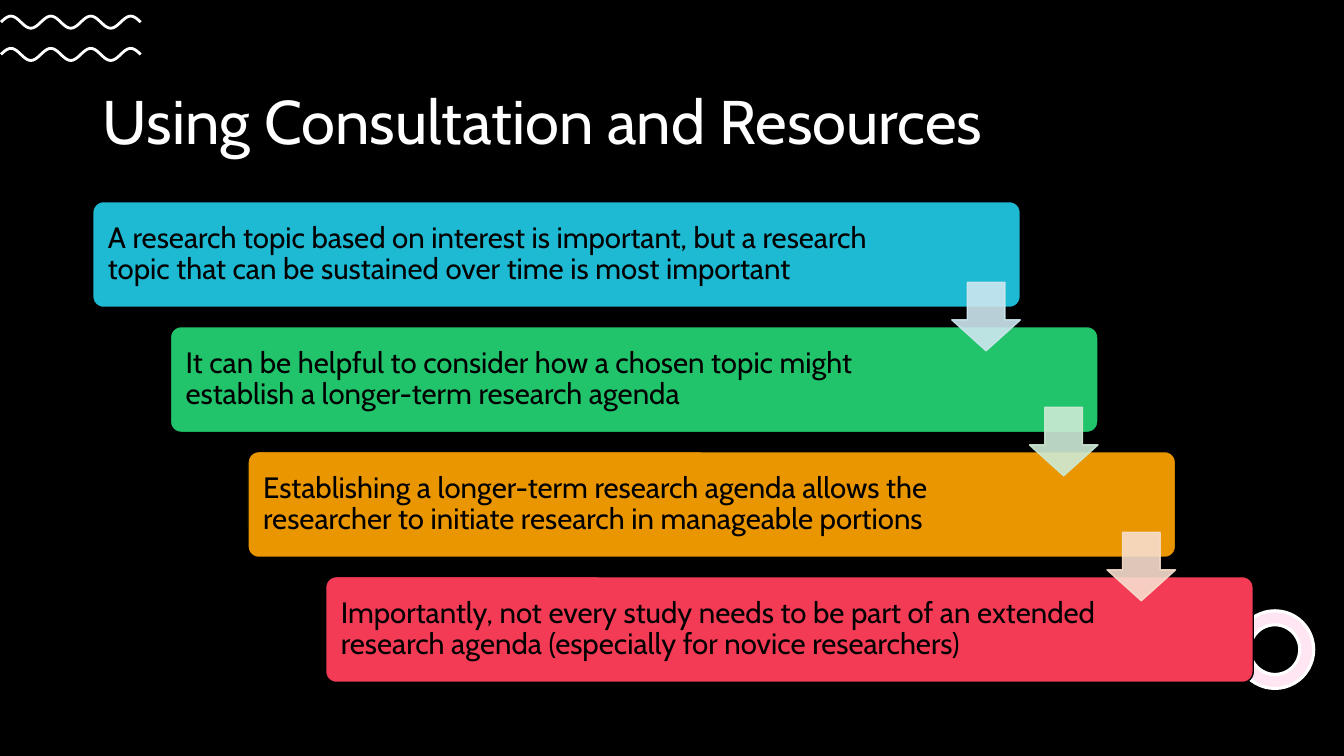
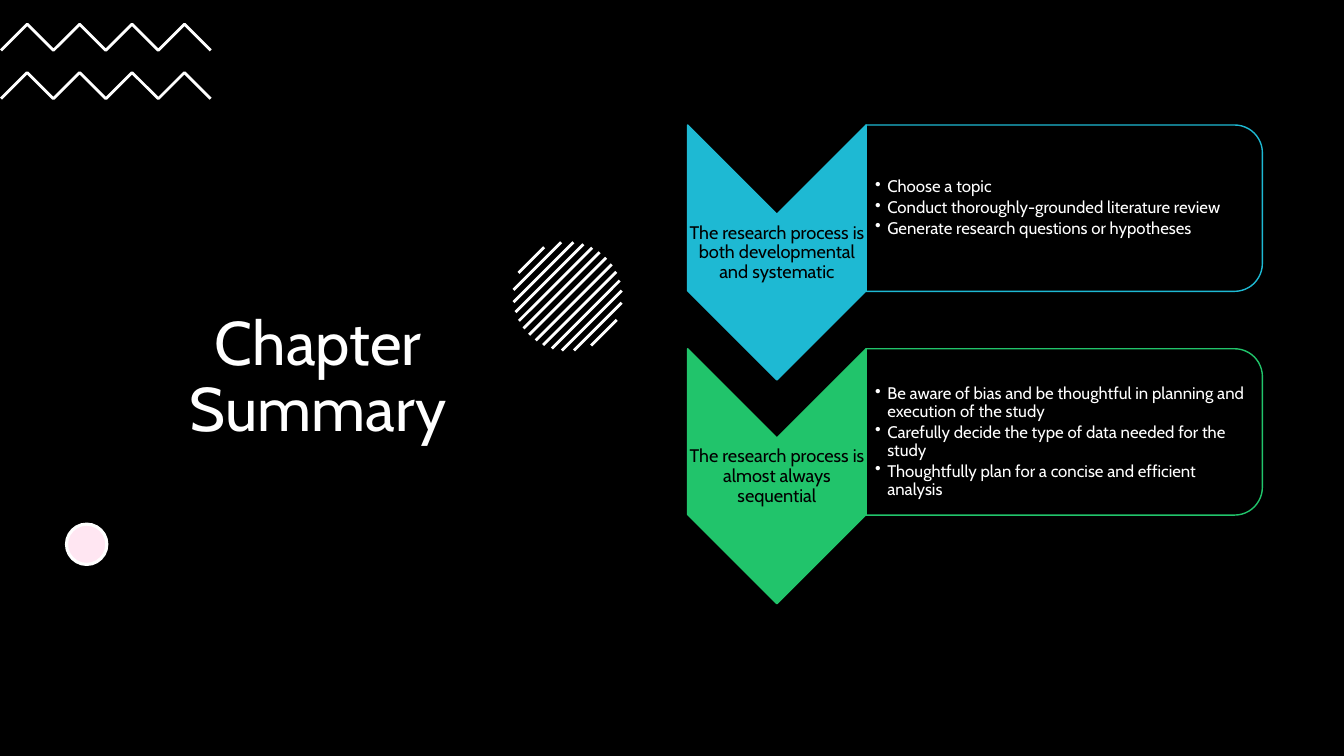
"""Build two black slides: a staircase of research advice and a chapter summary."""
import math
from dataclasses import dataclass

from lxml import etree
from pptx import Presentation
from pptx.dml.color import RGBColor
from pptx.enum import shapes, text
from pptx.oxml import ns
from pptx.util import Inches, Pt


@dataclass(frozen=True)
class Theme:
    font: str = "Cabin"
    black: str = "000000"
    white: str = "FFFFFF"
    pink: str = "FFE6F2"
    blue: str = "1EB9D3"
    green: str = "21C46B"
    orange: str = "EA9600"
    red: str = "F43B56"
    arrows: tuple = ("CDE6EF", "CDEAD4", "F7DDCC")
    title: int = 44
    step: int = 21
    label: int = 13
    bullet: int = 12


T = Theme()
MSO = shapes.MSO_SHAPE
CENTER = text.PP_ALIGN.CENTER
LEFT = text.PP_ALIGN.LEFT


def paint(sp, fill, line, width=1.0, alpha=None):
    sp.shadow.inherit = False
    if fill:
        sp.fill.solid()
        sp.fill.fore_color.rgb = RGBColor.from_string(fill)
    else:
        sp.fill.background()
    sp.line.color.rgb = RGBColor.from_string(line)
    sp.line.width = Pt(width)
    if alpha:
        for clr in sp._element.spPr.iter(ns.qn("a:srgbClr")):
            etree.SubElement(clr, ns.qn("a:alpha"), val=str(alpha * 1000))


def write(sp, lines, size, color, align=LEFT, insets=(0.1, 0.05, 0.1, 0.05), bullets=False):
    tf = sp.text_frame
    tf.word_wrap = True
    tf.auto_size = text.MSO_AUTO_SIZE.NONE
    tf.vertical_anchor = text.MSO_ANCHOR.MIDDLE
    tf.margin_left, tf.margin_top, tf.margin_right, tf.margin_bottom = map(Inches, insets)
    tf.text = "\n".join(lines)
    for p in tf.paragraphs:
        p.alignment = align
        p.line_spacing = 0.9
        if bullets:
            p.space_after = Pt(1.8)
            pPr = p._p.get_or_add_pPr()
            pPr.set("marL", str(Inches(0.12)))
            pPr.set("indent", str(-Inches(0.12)))
            etree.SubElement(pPr, ns.qn("a:buChar"), char="•")
        for r in p.runs:
            r.font.name = T.font
            r.font.size = Pt(size)
            r.font.color.rgb = RGBColor.from_string(color)


prs = Presentation()
prs.slide_width, prs.slide_height = Inches(13.33), Inches(7.5)
bg = prs.slide_master.background.fill
bg.solid()
bg.fore_color.rgb = RGBColor.from_string(T.black)

wave = [(0.01 + 0.0198 * i, -0.06 * math.sin(math.pi * i / 10)) for i in range(71)]
zigzag = [(0.01 + 0.26 * i, -0.26 * (i % 2)) for i in range(9)]
slides = []
for title, box, align, curve, baselines in (
    ("Using Consultation and Resources", (0.92, 0.62, 11.5, 1.23), LEFT, wave, (0.22, 0.54)),
    ("Chapter Summary", (1.21, 0.76, 3.89, 5.99), CENTER, zigzag, (0.5, 0.98)),
):
    s = prs.slides.add_slide(prs.slide_layouts[5])
    slides.append(s)
    sp = s.shapes.title
    sp.left, sp.top, sp.width, sp.height = map(Inches, box)
    write(sp, [title], T.title, T.white, align)
    for y in baselines:
        points = [(Inches(px), Inches(y + py)) for px, py in curve]
        builder = s.shapes.build_freeform(*points[0])
        builder.add_line_segments(points[1:], close=False)
        paint(builder.convert_to_shape(), None, T.white, 2)

steps_slide, summary_slide = slides

s = steps_slide
ring = s.shapes.add_shape(MSO.DONUT, Inches(12.26), Inches(6.06), Inches(0.77), Inches(0.77))
ring.adjustments[0] = 0.18
paint(ring, T.pink, T.white, 2.25)

steps = (
    (T.blue, "A research topic based on interest is important, but a research topic "
             "that can be sustained over time is most important"),
    (T.green, "It can be helpful to consider how a chosen topic might establish "
              "a longer-term research agenda"),
    (T.orange, "Establishing a longer-term research agenda allows the researcher "
               "to initiate research in manageable portions"),
    (T.red, "Importantly, not every study needs to be part of an extended research agenda "
            "(especially for novice researchers)"),
)
dx, dy = 0.77, 1.24
for i, (color, line) in enumerate(steps):
    sp = s.shapes.add_shape(MSO.ROUNDED_RECTANGLE, Inches(0.92 + i * dx), Inches(2 + i * dy),
                            Inches(9.2), Inches(1.05))
    sp.adjustments[0] = 0.1
    paint(sp, color, T.black)
    write(sp, [line], T.step, T.black, insets=(0.12, 0.09, 1.45, 0.09))
for i, color in enumerate(T.arrows):
    sp = s.shapes.add_shape(MSO.DOWN_ARROW, Inches(9.44 + i * dx), Inches(2.8 + i * dy),
                            Inches(0.68), Inches(0.68))
    sp.adjustments[0], sp.adjustments[1] = 0.45, 0.45
    sp.adjustments[0] = 0.55
    paint(sp, color, color, alpha=90)

s = summary_slide
cx, cy, radius, pitch = 5.63, 2.94, 0.54, 0.06
for k in range(-6, 7):
    half = math.sqrt((radius ** 2 - 2 * (k * pitch) ** 2) / 2)
    x, y = cx + k * pitch, cy + k * pitch
    stripe = s.shapes.add_connector(shapes.MSO_CONNECTOR.STRAIGHT, Inches(x - half),
                                    Inches(y + half), Inches(x + half), Inches(y - half))
    stripe.line.color.rgb = RGBColor.from_string(T.white)
    stripe.line.width = Pt(2)
    etree.SubElement(stripe._element.spPr, ns.qn("a:effectLst"))

dot = s.shapes.add_shape(MSO.OVAL, Inches(0.66), Inches(5.2), Inches(0.4), Inches(0.4))
paint(dot, T.pink, T.white, 2.25)

stages = (
    (T.blue, "The research process is both developmental and systematic", 0.01,
     ("Choose a topic",
      "Conduct thoroughly-grounded literature review",
      "Generate research questions or hypotheses")),
    (T.green, "The research process is almost always sequential", 0.21,
     ("Be aware of bias and be thoughtful in planning and execution of the study",
      "Carefully decide the type of data needed for the study",
      "Thoughtfully plan for a concise and efficient analysis")),
)
for i, (color, label, inset_top, points) in enumerate(stages):
    y = i * 2.22
    for kind, x, top, w, h, fill in (
        (MSO.CHEVRON, 6.44, 1.62, 2.53, 1.77, color),
        (MSO.ROUND_2_SAME_RECTANGLE, 9.73, 0.1, 1.65, 3.93, T.black),
    ):
        sp = s.shapes.add_shape(kind, Inches(x), Inches(top + y), Inches(w), Inches(h))
        sp.rotation = 90
        paint(sp, fill, color)
    sp = s.shapes.add_textbox(Inches(6.82), Inches(2.13 + y), Inches(1.77), Inches(0.76))
    write(sp, [label], T.label, T.black, CENTER, (0.01,) * 4)
    sp = s.shapes.add_textbox(Inches(8.59), Inches(1.32 + y), Inches(3.85), Inches(1.49))
    write(sp, points, T.bullet, T.white, insets=(0.09, inset_top, 0.01, 0.01), bullets=True)

prs.save("out.pptx")
